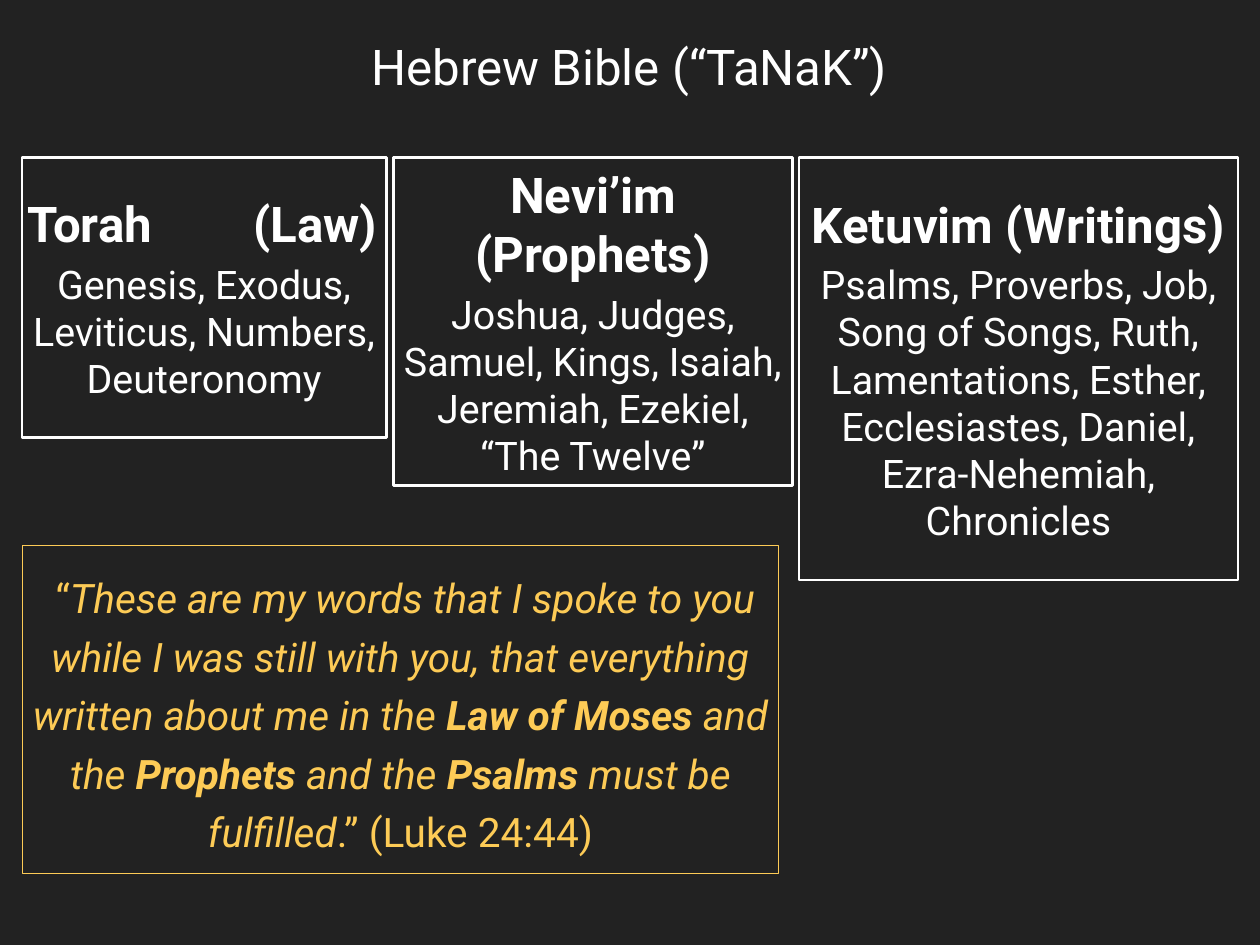
from dataclasses import dataclass

import pptx
import pptx.dml.color
import pptx.enum.shapes
import pptx.enum.text
import pptx.oxml.ns
import pptx.util
from lxml import etree
from pptx.util import Pt

BACKGROUND = pptx.dml.color.RGBColor(0x22, 0x22, 0x22)
WHITE = pptx.dml.color.RGBColor(0xFF, 0xFF, 0xFF)
GOLD = pptx.dml.color.RGBColor(0xFD, 0xCB, 0x56)
FONT = "Roboto"
INSET = Pt(4.5)
DIVISION_TOP = 128
LEFT_MARGIN = 18


@dataclass
class Division:
    left: float
    width: float
    height: float
    heading: str
    books: str
    heading_tab: float = 0  # right tab stop for a heading spread over the box


@dataclass
class Phrase:
    text: str
    italic: bool = True
    bold: bool = False


DIVISIONS = [
    Division(LEFT_MARGIN, 296, 227.5, "Torah\t(Law)",
             "Genesis, Exodus, Leviticus, Numbers, Deuteronomy", 284),
    Division(320, 324, 266.5, "Nevi’im (Prophets)",
             "Joshua, Judges, Samuel, Kings, Isaiah, Jeremiah, Ezekiel, “The Twelve”"),
    Division(649.5, 356.5, 343.5, "Ketuvim (Writings)",
             "Psalms, Proverbs, Job, Song of Songs, Ruth, Lamentations, Esther, "
             "Ecclesiastes, Daniel, Ezra-Nehemiah, Chronicles"),
]

LUKE_QUOTE = [
    Phrase(" “", italic=False),
    Phrase("These are my words that I spoke to you while I was still with you, "
           "that everything written about me in the "),
    Phrase("Law of Moses", bold=True),
    Phrase(" and the "),
    Phrase("Prophets", bold=True),
    Phrase(" and the "),
    Phrase("Psalms", bold=True),
    Phrase(" must be fulfilled"),
    Phrase(".” (Luke 24:44)", italic=False),
]


def set_frame(frame) -> None:
    frame.word_wrap = True
    frame.auto_size = pptx.enum.text.MSO_AUTO_SIZE.NONE
    frame.vertical_anchor = pptx.enum.text.MSO_ANCHOR.MIDDLE
    frame.margin_left = frame.margin_right = INSET
    frame.margin_top = frame.margin_bottom = INSET


def set_paragraph(paragraph, size: float, color: pptx.dml.color.RGBColor,
                  bold: bool | None = None) -> None:
    paragraph.alignment = pptx.enum.text.PP_ALIGN.CENTER
    font = paragraph.font
    font.name, font.size, font.bold = FONT, Pt(size), bold
    font.color.rgb = color


def add_box(slide, left: float, top: float, width: float, height: float,
            color: pptx.dml.color.RGBColor, line_width: float):
    """Draw an outlined box and return its text frame."""
    box = slide.shapes.add_shape(pptx.enum.shapes.MSO_SHAPE.RECTANGLE,
                                 Pt(left), Pt(top), Pt(width), Pt(height))
    box.shadow.inherit = False
    box.fill.solid()
    box.fill.fore_color.rgb = BACKGROUND
    box.line.color.rgb = color
    box.line.width = Pt(line_width)
    set_frame(box.text_frame)
    return box.text_frame


def add_right_tab(paragraph, position: float) -> None:
    properties = paragraph._p.get_or_add_pPr()
    tabs = etree.SubElement(properties, pptx.oxml.ns.qn("a:tabLst"))
    etree.SubElement(tabs, pptx.oxml.ns.qn("a:tab"), pos=str(Pt(position)), algn="r")


def add_division(slide, division: Division) -> None:
    frame = add_box(slide, division.left, DIVISION_TOP, division.width,
                    division.height, WHITE, 2)
    heading, books = frame.paragraphs[0], frame.add_paragraph()
    heading.text, books.text = division.heading, division.books
    if division.heading_tab:
        add_right_tab(heading, division.heading_tab)
    set_paragraph(heading, 40, WHITE, bold=True)
    set_paragraph(books, 32, WHITE, bold=False)
    if division.heading_tab:
        heading.alignment = pptx.enum.text.PP_ALIGN.LEFT
    heading.space_after = books.space_after = Pt(6)


def add_quote(slide, phrases: list[Phrase]) -> None:
    frame = add_box(slide, LEFT_MARGIN, 443.5, 615, 266.5, GOLD, 1)
    quote = frame.paragraphs[0]
    set_paragraph(quote, 33, GOLD)
    quote.line_spacing = 1.2
    for phrase in phrases:
        run = quote.add_run()
        run.text = phrase.text
        run.font.italic, run.font.bold = phrase.italic, phrase.bold


def main() -> None:
    deck = pptx.Presentation()
    deck.slide_width, deck.slide_height = Pt(1024), Pt(768)
    slide = deck.slides.add_slide(deck.slide_layouts.get_by_name("Title Only"))
    slide.background.fill.solid()
    slide.background.fill.fore_color.rgb = BACKGROUND

    # Title
    title = slide.shapes.title
    title.left, title.top, title.width, title.height = Pt(256), Pt(21.5), Pt(511), Pt(63.5)
    set_frame(title.text_frame)
    title.text_frame.text = "Hebrew Bible (“TaNaK”)"
    set_paragraph(title.text_frame.paragraphs[0], 40, WHITE)

    # Three divisions of the Hebrew Bible
    for division in DIVISIONS:
        add_division(slide, division)

    # Quotation that names the divisions
    add_quote(slide, LUKE_QUOTE)

    deck.save("out.pptx")


if __name__ == "__main__":
    main()
